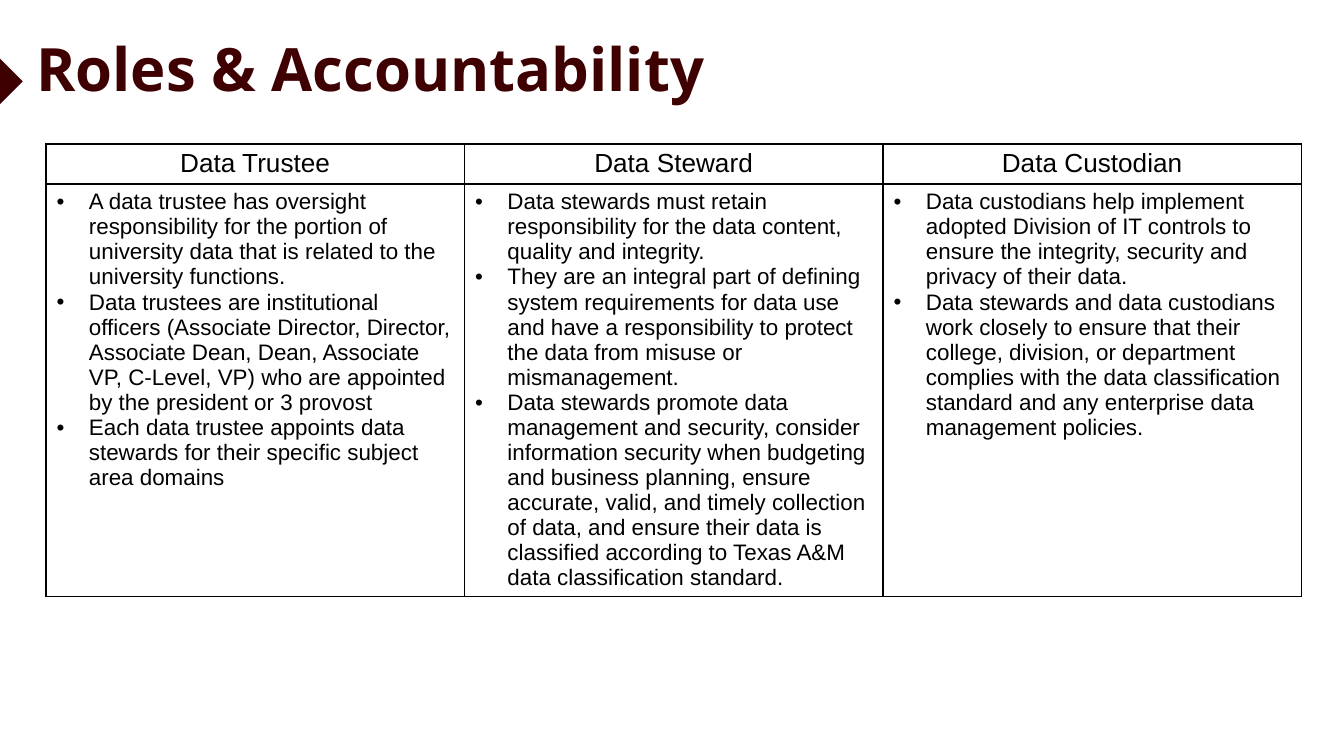
from pptx import Presentation
from pptx import util as u
from pptx.dml.color import RGBColor
from pptx.enum import shapes, text
from pptx.oxml import parse_xml
from pptx.oxml.ns import nsdecls

MAROON, BLACK = "3E0001", "000000"
INDENT = u.Pt(17.28)

ROLES = {
    "Data Trustee": [
        "A data trustee has oversight responsibility for the portion of university data that is related to the university functions.",
        "Data trustees are institutional officers (Associate Director, Director, Associate Dean, Dean, Associate VP, C-Level, VP) who are appointed by the president or 3 provost",
        "Each data trustee appoints data stewards for their specific subject area domains",
    ],
    "Data Steward": [
        "Data stewards must retain responsibility for the data content, quality and integrity.",
        "They are an integral part of defining system requirements for data use and have a responsibility to protect the data from misuse or mismanagement.",
        "Data stewards promote data management and security, consider information security when budgeting and business planning, ensure accurate, valid, and timely collection of data, and ensure their data is classified according to Texas A&M data classification standard.",
    ],
    "Data Custodian": [
        "Data custodians help implement adopted Division of IT controls to ensure the integrity, security and privacy of their data.",
        "Data stewards and data custodians work closely to ensure that their college, division, or department complies with the data classification standard and any enterprise data management policies.",
    ],
}


def color(value):
    return RGBColor.from_string(value)


def write(frame, words, size, font="Arial", fill=BLACK, bold=False,
          align=text.PP_ALIGN.LEFT, bullet=False):
    """Fill a text frame with one paragraph per string."""
    for index, line in enumerate(words):
        para = frame.paragraphs[0] if index == 0 else frame.add_paragraph()
        para.alignment = align
        if bullet:
            props = para._p.get_or_add_pPr()
            props.set("marL", str(INDENT))
            props.set("indent", str(-INDENT))
            for xml in (f'<a:buClr {nsdecls("a")}><a:srgbClr val="{fill}"/></a:buClr>',
                        f'<a:buFont {nsdecls("a")} typeface="Arial"/>',
                        f'<a:buChar {nsdecls("a")} char="•"/>'):
                props.append(parse_xml(xml))
        span = para.add_run()
        span.text = line
        span.font.size = u.Pt(size)
        span.font.name = font
        span.font.bold = bold
        span.font.color.rgb = color(fill)


deck = Presentation()
deck.slide_width, deck.slide_height = u.Pt(720), u.Pt(405)
page = deck.slides.add_slide(deck.slide_layouts.get_by_name("Title Only"))

# Arrow on the left edge
arrow = page.shapes.add_shape(shapes.MSO_SHAPE.RIGHT_TRIANGLE,
                              u.Pt(-25.2), u.Pt(28.1), u.Pt(31), u.Pt(31))
arrow.rotation = 225
arrow.shadow.inherit = False
arrow.fill.solid()
arrow.fill.fore_color.rgb = color(MAROON)
arrow.line.fill.background()

# Title
title = page.shapes.title
title.left, title.top, title.width, title.height = u.Pt(14.4), u.Pt(22.3), u.Pt(499), u.Pt(27.4)
frame = title.text_frame
frame.auto_size = text.MSO_AUTO_SIZE.NONE
frame.word_wrap = True
frame.vertical_anchor = text.MSO_ANCHOR.MIDDLE
frame.margin_left = frame.margin_right = u.Pt(5)
frame.margin_top = frame.margin_bottom = u.Pt(2.9)
write(frame, ["Roles & Accountability"], 32, font="Open Sans", fill=MAROON, bold=True)

# Roles table: one column per role
table = page.shapes.add_table(2, len(ROLES), u.Pt(24.6), u.Pt(77),
                              u.Pt(672.6), u.Pt(242.5)).table
table.first_row = table.horz_banding = False
table.rows[0].height, table.rows[1].height = u.Pt(21.6), u.Pt(220.9)
for column, (role, duties) in enumerate(ROLES.items()):
    table.columns[column].width = u.Pt(224.2)
    heading, body = table.cell(0, column), table.cell(1, column)
    heading.vertical_anchor = text.MSO_ANCHOR.MIDDLE
    write(heading.text_frame, [role], 14, align=text.PP_ALIGN.CENTER)
    write(body.text_frame, duties, 12, bullet=True)

# Cell margins, borders and empty fill
for cell in table.iter_cells():
    cell.margin_left = cell.margin_right = u.Pt(5.76)
    cell.margin_top = cell.margin_bottom = u.Pt(2.88)
    props = cell._tc.get_or_add_tcPr()
    for side in ("lnL", "lnR", "lnT", "lnB"):
        props.append(parse_xml(
            f'<a:{side} {nsdecls("a")} w="{u.Pt(1)}"><a:solidFill>'
            f'<a:srgbClr val="{BLACK}"/></a:solidFill></a:{side}>'))
    cell.fill.background()

deck.save("out.pptx")
